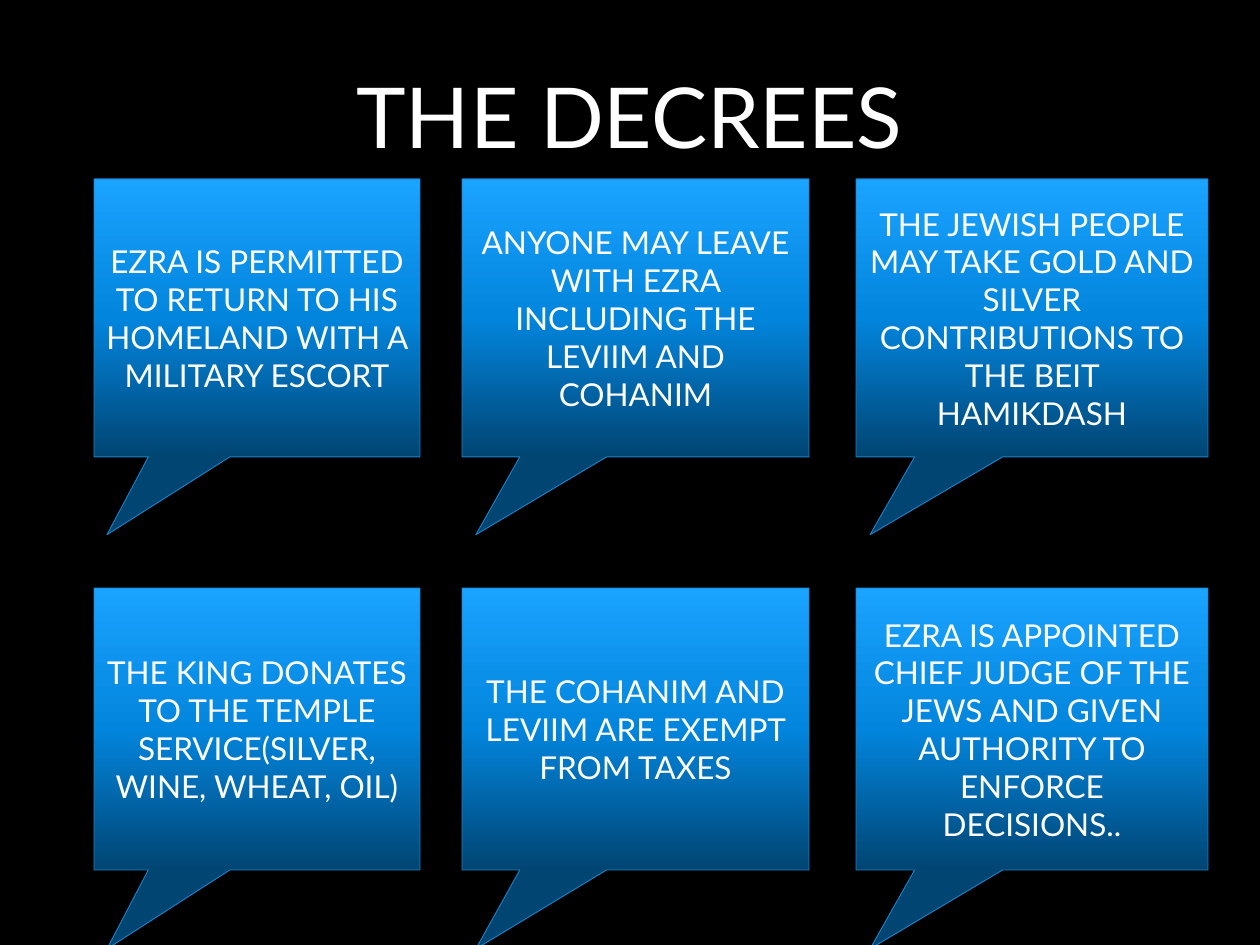
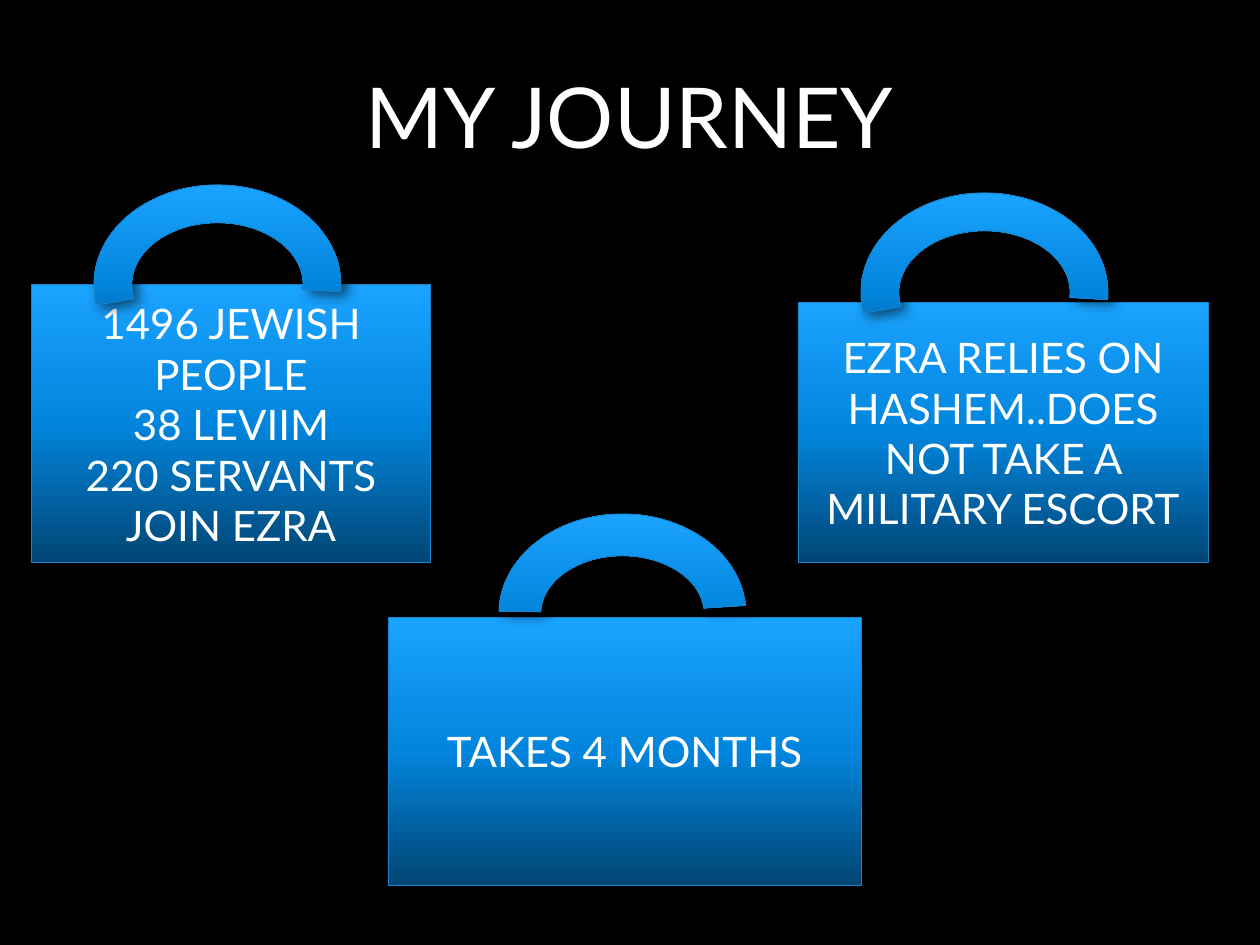
from dataclasses import dataclass
from itertools import product

from lxml import etree
from pptx import Presentation
from pptx.dml.color import RGBColor
from pptx.enum.shapes import MSO_SHAPE as SHAPE
from pptx.enum.text import MSO_ANCHOR as ANCHOR, PP_ALIGN as ALIGN
from pptx.oxml.ns import qn
from pptx.util import Emu, Pt

PX = 914400 / 126
TITLE_ONLY = 5


@dataclass(frozen=True)
class Theme:
    font: str = "Lato"
    background: str = "000000"
    text: str = "FFFFFF"
    outline: str = "1884CD"
    shadow: str = "000000"
    gradient: tuple = ((0, "014573"), (50, "0285DD"), (100, "1AA3FF"))
    title_size: int = 48
    decree_size: int = 18
    journey_size: int = 24


THEME = Theme()

TITLE_BOX = (94, 16, 1071, 197)

CALLOUT_COLUMNS = ((94, 326), (462, 347), (856, 352))  # left, width
CALLOUT_ROWS = ((179, 278), (588, 282))  # top, height
CALLOUT_TAIL = (-0.46, 0.78)
DECREES = (
    "EZRA IS PERMITTED TO RETURN TO HIS HOMELAND WITH A MILITARY ESCORT",
    "ANYONE MAY LEAVE WITH EZRA INCLUDING THE LEVIIM AND COHANIM",
    "THE JEWISH PEOPLE MAY TAKE GOLD AND SILVER CONTRIBUTIONS TO THE BEIT HAMIKDASH",
    "THE KING DONATES TO THE TEMPLE SERVICE(SILVER, WINE, WHEAT, OIL)",
    "THE COHANIM AND LEVIIM ARE EXEMPT FROM TAXES",
    "EZRA IS APPOINTED CHIEF JUDGE OF THE JEWS AND GIVEN AUTHORITY TO ENFORCE DECISIONS..",
)

HANDLE_SIZE = (247, 199)
SUNK_HANDLE = (102.2, 2.03, 0.19)
LEVEL_HANDLE = (108.67, 213.77, 0.21)
# suitcase box, handle offset from its corner, handle arc, text
SUITCASES = (
    ((31, 285, 400, 278), (63, -100), SUNK_HANDLE,
     "1496 JEWISH PEOPLE\n38 LEVIIM\n220 SERVANTS\nJOIN EZRA"),
    ((388, 617, 473, 268), (111, -103), LEVEL_HANDLE, "TAKES 4 MONTHS"),
    ((798, 302, 410, 261), (63, -109), SUNK_HANDLE,
     "EZRA RELIES ON HASHEM..DOES NOT TAKE A MILITARY ESCORT"),
)


def emu(box):
    return [Emu(round(v * PX)) for v in box]


def write(sp, text, size, color=THEME.text, align=ALIGN.CENTER, anchor=ANCHOR.MIDDLE):
    tf = sp.text_frame
    tf.text = text
    tf.word_wrap = True
    tf.vertical_anchor = anchor
    for p in tf.paragraphs:
        p.alignment = align
        p.font.size = Pt(size)
        p.font.name = THEME.font
        p.font.color.rgb = RGBColor.from_string(color)


def add_node(parent, tag, **attrs):
    return etree.SubElement(parent, qn(tag), {k: str(v) for k, v in attrs.items()})


def style_glossy(sp):
    """Give a shape the gradient fill, thin outline and soft shadow."""
    props = sp.element.spPr
    fill = add_node(props, "a:gradFill", rotWithShape=1)
    stops = add_node(fill, "a:gsLst")
    for pos, color in THEME.gradient:
        stop = add_node(stops, "a:gs", pos=pos * 1000)
        add_node(stop, "a:srgbClr", val=color)
    add_node(fill, "a:lin", ang=270 * 60000, scaled=0)

    sp.line.color.rgb = RGBColor.from_string(THEME.outline)
    sp.line.width = Pt(0.5)

    effects = add_node(props, "a:effectLst")
    shadow = add_node(effects, "a:outerShdw", blurRad=Pt(7), dist=Pt(4),
                      dir=35 * 60000, rotWithShape=0)
    color = add_node(shadow, "a:srgbClr", val=THEME.shadow)
    add_node(color, "a:alpha", val=55000)


def add_glossy(slide, kind, box, adjustments=()):
    sp = slide.shapes.add_shape(kind, *emu(box))
    for i, value in enumerate(adjustments):
        sp.adjustments[i] = value
    style_glossy(sp)
    return sp


def add_titled_slide(prs, title):
    slide = prs.slides.add_slide(prs.slide_layouts[TITLE_ONLY])
    sp = slide.shapes.title
    sp.left, sp.top, sp.width, sp.height = emu(TITLE_BOX)
    write(sp, title, THEME.title_size)
    return slide


def add_suitcase(slide, box, handle_offset, arc, text):
    left, top = box[:2]
    dx, dy = handle_offset
    write(add_glossy(slide, SHAPE.RECTANGLE, box), text, THEME.journey_size)
    add_glossy(slide, SHAPE.BLOCK_ARC, (left + dx, top + dy, *HANDLE_SIZE), arc)


def add_decrees_slide(prs):
    slide = add_titled_slide(prs, "THE DECREES")
    cells = product(CALLOUT_ROWS, CALLOUT_COLUMNS)
    for ((top, height), (left, width)), text in zip(cells, DECREES):
        sp = add_glossy(slide, SHAPE.RECTANGULAR_CALLOUT,
                        (left, top, width, height), CALLOUT_TAIL)
        write(sp, text, THEME.decree_size)


def add_journey_slide(prs):
    slide = add_titled_slide(prs, "MY JOURNEY")
    for suitcase in SUITCASES:
        add_suitcase(slide, *suitcase)


def main():
    prs = Presentation()
    prs.slide_width, prs.slide_height = emu((1260, 945))
    background = prs.slide_master.background.fill
    background.solid()
    background.fore_color.rgb = RGBColor.from_string(THEME.background)
    add_decrees_slide(prs)
    add_journey_slide(prs)
    prs.save("out.pptx")


if __name__ == "__main__":
    main()
